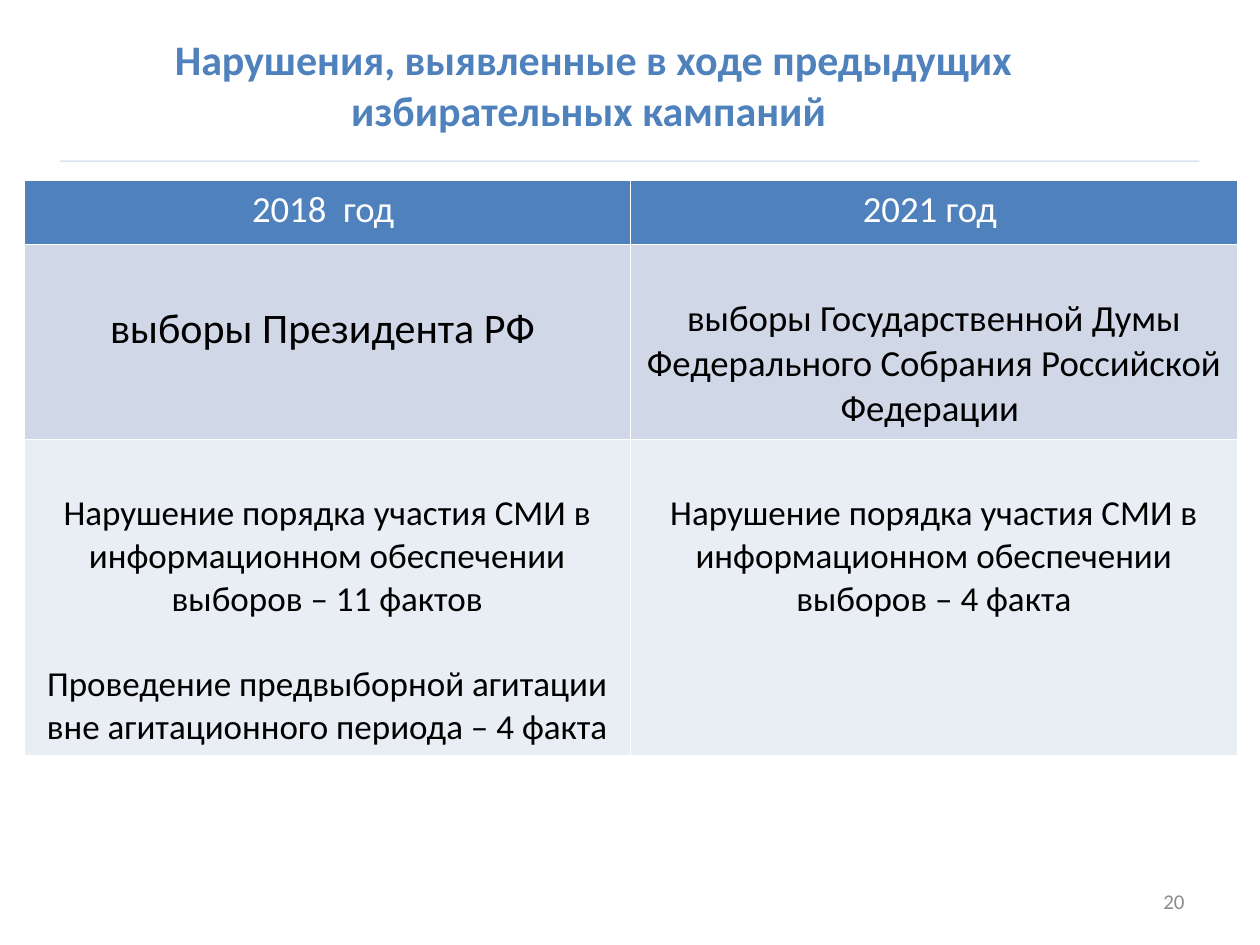
"""Builds the slide comparing violations found in two election campaigns."""
from lxml import etree
from pptx import Presentation
from pptx.dml.color import RGBColor
from pptx.enum.shapes import MSO_CONNECTOR
from pptx.enum.text import MSO_ANCHOR, PP_ALIGN
from pptx.oxml.ns import qn
from pptx.util import Inches, Pt

STRAIGHT = MSO_CONNECTOR.STRAIGHT
MIDDLE, TOP = MSO_ANCHOR.MIDDLE, MSO_ANCHOR.TOP
CENTER, RIGHT = PP_ALIGN.CENTER, PP_ALIGN.RIGHT

THEME = {
    "font": "Calibri",
    "accent": "4F81BD", "white": "FFFFFF", "black": "000000", "number": "8C8C8C",
    "rows": ["4F81BD", "D0D8E8", "E9EDF4"],
    "title_size": 24, "head_size": 21, "election_size": 24, "body_size": 21,
    "finding_size": 20, "number_size": 12,
}
LINE_SPACING = 1.22
INSET_X, INSET_Y = 0.11, 0.06


def add_text(paragraph, text, size, color, align=CENTER, bold=False):
    paragraph.alignment = align
    run = paragraph.add_run()
    run.text = text
    run.font.name = THEME["font"]
    run.font.size = Pt(size)
    run.font.bold = bold
    run.font.color.rgb = RGBColor.from_string(color)


def add_border(cell, side):
    border = etree.SubElement(cell._tc.get_or_add_tcPr(), qn(f"a:{side}"), w=str(Pt(1)))
    fill = etree.SubElement(border, qn("a:solidFill"))
    etree.SubElement(fill, qn("a:srgbClr"), val=THEME["white"])


prs = Presentation()
prs.slide_width, prs.slide_height = Inches(10), Inches(7.5)
slide = prs.slides.add_slide(prs.slide_layouts[5])

rule = slide.shapes.add_connector(
    STRAIGHT, Inches(0.48), Inches(1.28), Inches(9.52), Inches(1.28))
rule.line.width = Pt(1)
rule.line.color.rgb = RGBColor.from_string(THEME["accent"])
rule_color = rule.line._ln.find(f".//{qn('a:srgbClr')}")
etree.SubElement(rule_color, qn("a:alpha"), val="20000")
etree.SubElement(rule._element.spPr, qn("a:effectLst"))

page_number = slide.shapes.add_textbox(
    Inches(7.17), Inches(6.95), Inches(2.33), Inches(0.4)).text_frame
page_number.word_wrap = True
page_number.vertical_anchor = MIDDLE
add_text(page_number.paragraphs[0], "20", THEME["number_size"], THEME["number"], RIGHT)

heading = slide.shapes.title
heading.left, heading.top = Inches(1.06), Inches(0.21)
heading.width, heading.height = Inches(7.3), Inches(0.92)
heading.text_frame.word_wrap = True
heading.text_frame.vertical_anchor = MIDDLE
add_text(heading.text_frame.paragraphs[0],
         "Нарушения, выявленные в ходе предыдущих избирательных кампаний ",
         THEME["title_size"], THEME["accent"], bold=True)

head, election = THEME["head_size"], THEME["election_size"]
body, finding = THEME["body_size"], THEME["finding_size"]
campaigns = [
    [(0, head, ["2018  год "]), (0, head, ["2021 год "])],
    [(election, election, ["выборы Президента РФ "]),
     (body, body, ["выборы Государственной Думы Федерального Собрания Российской Федерации "])],
    [(body, finding,
      ["Нарушение порядка участия СМИ в информационном обеспечении выборов – 11 фактов",
       "Проведение предвыборной агитации вне агитационного периода – 4 факта"]),
     (body, finding,
      ["Нарушение порядка участия СМИ в информационном обеспечении выборов – 4 факта"])],
]
row_heights = [0.51, 1.55, 2.51]
comparison = slide.shapes.add_table(
    3, 2, Inches(0.19), Inches(1.43), Inches(9.63), Inches(sum(row_heights))).table
comparison.horz_banding = False

for row_index, (height, findings) in enumerate(zip(row_heights, campaigns)):
    comparison.rows[row_index].height = Inches(height)
    text_color = THEME["black"] if row_index else THEME["white"]
    for column_index, (lead_size, size, texts) in enumerate(findings):
        cell = comparison.cell(row_index, column_index)
        cell.vertical_anchor = TOP
        cell.margin_left = cell.margin_right = Inches(INSET_X)
        cell.margin_top = Inches(INSET_Y) + Pt(lead_size * LINE_SPACING)
        cell.margin_bottom = Inches(INSET_Y)
        for side in ("lnL", "lnR", "lnT", "lnB"):
            add_border(cell, side)
        cell.fill.solid()
        cell.fill.fore_color.rgb = RGBColor.from_string(THEME["rows"][row_index])
        for text_index, text in enumerate(texts):
            paragraph = cell.text_frame.paragraphs[0]
            if text_index:
                paragraph = cell.text_frame.add_paragraph()
                paragraph.space_before = Pt(size * LINE_SPACING)
            add_text(paragraph, text, size, text_color)

prs.save("out.pptx")
